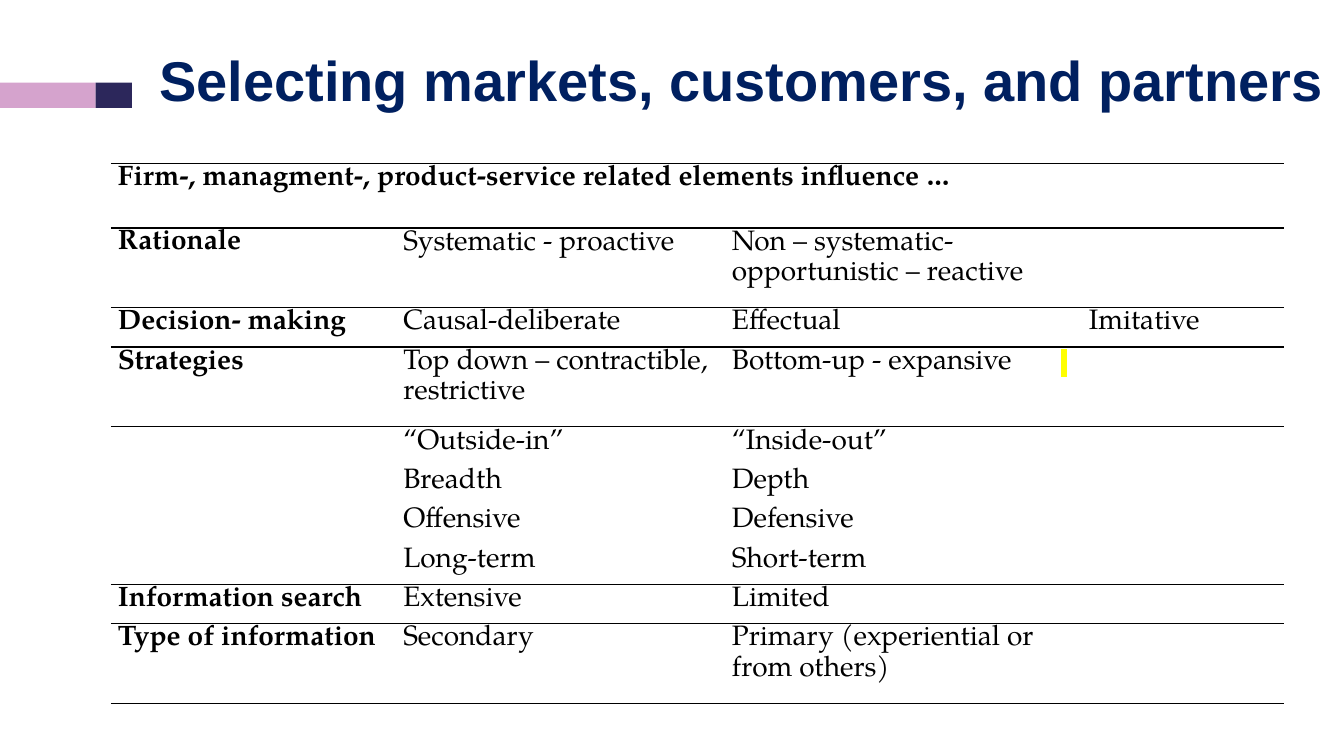
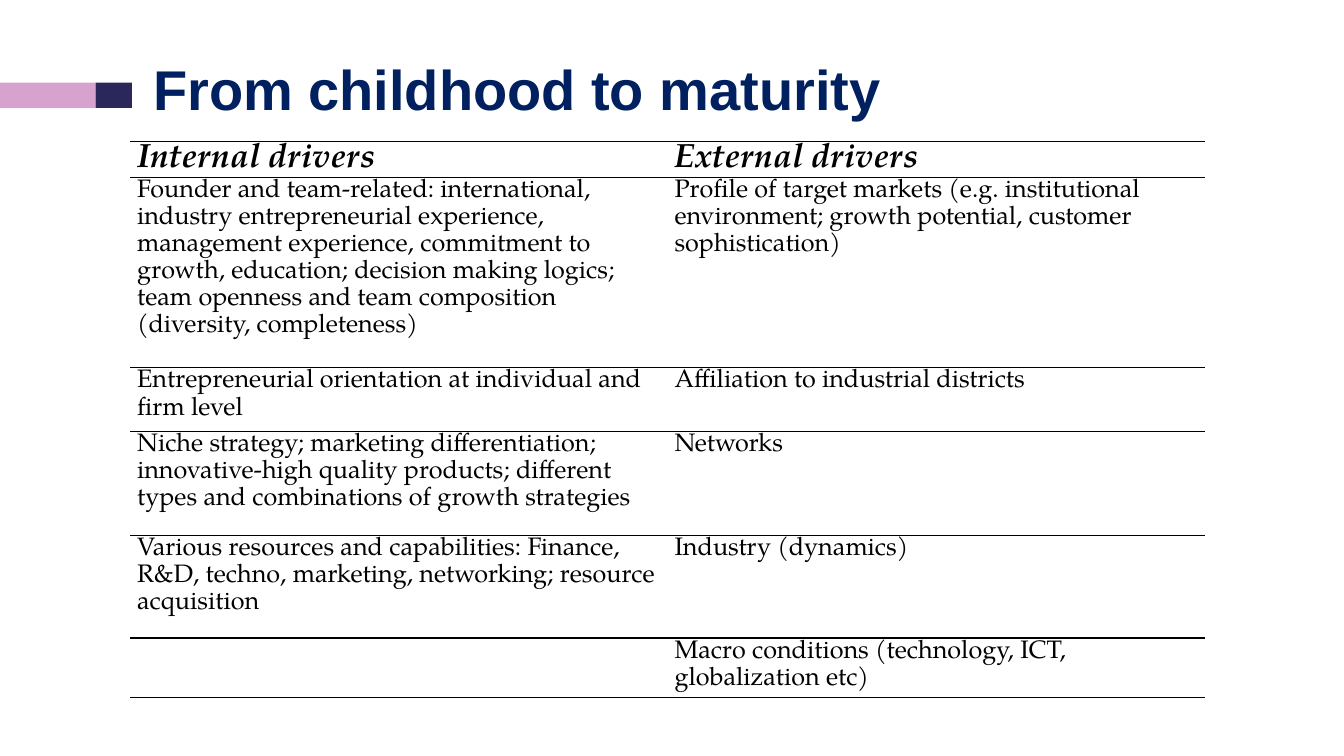
from pptx import Presentation
from pptx.dml.color import RGBColor
from pptx.enum.shapes import MSO_SHAPE
from pptx.enum.text import MSO_ANCHOR, MSO_AUTO_SIZE, PP_ALIGN
from pptx.oxml import parse_xml
from pptx.oxml.ns import nsdecls, qn
from pptx.util import Inches, Pt

COLORS = {"pink": "D5A3CD", "indigo": "2C275B", "title": "002060",
          "text": "000000", "rule": "000000", "mark": "FFFF00"}
SERIF = "TeX Gyre Pagella"
PLAIN_GRID = "{2D5ABB26-0587-4C30-8999-92F81FD0307C}"
INSETS = {"margin_left": 0.07, "margin_right": 0.07,
          "margin_top": 0, "margin_bottom": 0}
TITLE = {"name": "Arial", "size": Pt(40), "bold": True}
BODY_20 = {"name": SERIF, "size": Pt(20), "bold": False}
LABEL_20 = {**BODY_20, "bold": True}
BODY_18 = {"name": SERIF, "size": Pt(18), "bold": False}
HEAD_24 = {"name": SERIF, "size": Pt(24), "bold": True, "italic": True}

MARKETS = [
    ["Firm-, managment-, product-service related elements influence …", "", "", ""],
    ["Rationale", "Systematic - proactive",
     "Non – systematic- opportunistic – reactive", ""],
    ["Decision- making", "Causal-deliberate", "Effectual", "Imitative"],
    ["Strategies", "Top down – contractible, restrictive",
     "Bottom-up - expansive", " "],
    ["", "“Outside-in”", "“Inside-out”", ""],
    ["", "Breadth", "Depth", ""],
    ["", "Offensive", "Defensive", ""],
    ["", "Long-term", "Short-term", ""],
    ["Information search", "Extensive", "Limited", ""],
    ["Type of information", "Secondary",
     "Primary (experiential or from others)", ""],
]
DRIVERS = [
    ["Internal drivers", "External drivers"],
    ["Founder and team-related: international, industry entrepreneurial "
     "experience, management experience, commitment to growth, education; "
     "decision making logics; team openness and team composition "
     "(diversity, completeness)",
     "Profile of target markets (e.g. institutional environment; growth "
     "potential, customer sophistication)"],
    ["Entrepreneurial orientation at individual and firm level",
     "Affiliation to industrial districts"],
    ["Niche strategy; marketing differentiation; innovative-high quality "
     "products; different types and combinations of growth strategies",
     "Networks"],
    ["Various resources and capabilities: Finance, R&D, techno, marketing, "
     "networking; resource acquisition", "Industry (dynamics)"],
    ["", "Macro conditions (technology, ICT, globalization etc)"],
]


def rgb(name):
    """Look up a palette colour."""
    return RGBColor.from_string(COLORS[name])


def format_font(font, style, color):
    """Apply a dict of font values and a palette colour."""
    for key, value in style.items():
        setattr(font, key, value)
    font.color.rgb = rgb(color)


def add_bands(s, layout, box):
    """Draw the two title bands in a box and hand them to the layout."""
    x, y, w, h = box
    split = 0.95 / 1.31
    for color, start, share in (("pink", 0, split), ("indigo", split, 1 - split)):
        band = s.shapes.add_shape(MSO_SHAPE.RECTANGLE, Inches(x + start * w),
                                  Inches(y), Inches(share * w), Inches(h))
        band.shadow.inherit = False
        band.fill.solid()
        band.fill.fore_color.rgb = rgb(color)
        band.line.fill.background()
        layout.shapes.element.append(band.element)


def set_title(s, text, box):
    """Place and format the title placeholder."""
    sp = s.shapes.title
    sp.left, sp.top, sp.width, sp.height = map(Inches, box)
    tf = sp.text_frame
    tf.auto_size = MSO_AUTO_SIZE.NONE
    tf.word_wrap = True
    tf.vertical_anchor = MSO_ANCHOR.MIDDLE
    p = tf.paragraphs[0]
    p.alignment = PP_ALIGN.LEFT
    p.line_spacing = 0.9
    r = p.add_run()
    r.text = text
    format_font(r.font, TITLE, "title")


def add_rule(cell, side):
    """Rule the top (T) or bottom (B) edge of a cell."""
    cell._tc.get_or_add_tcPr().insert(0, parse_xml(
        f'<a:ln{side} {nsdecls("a")} w="12700"><a:solidFill>'
        f'<a:srgbClr val="{COLORS["rule"]}"/></a:solidFill></a:ln{side}>'))


def highlight(r):
    """Mark a run with the highlighter colour."""
    r.font._element.find(qn("a:latin")).addprevious(parse_xml(
        f'<a:highlight {nsdecls("a")}><a:srgbClr val="{COLORS["mark"]}"/>'
        '</a:highlight>'))


def fill_cell(cell, text, style):
    """Set the insets and text of a cell."""
    for key, value in INSETS.items():
        setattr(cell, key, Inches(value))
    cell.fill.background()
    p = cell.text_frame.paragraphs[0]
    p.line_spacing = 1.07
    if text:
        r = p.add_run()
        r.text = text
        format_font(r.font, style, "text")
        if text.isspace():
            highlight(r)
    else:
        format_font(p.font, style, "text")


def add_ruled_table(s, box, rows, widths, heights, style_at, unruled=()):
    """Build a table in a box, with rules below all but the unruled rows."""
    x, y, w, h = box
    table = s.shapes.add_table(len(rows), len(widths), *map(Inches, box)).table
    table._tbl.tblPr.find(qn("a:tableStyleId")).text = PLAIN_GRID
    table.first_row = table.horz_banding = False
    for column, share in zip(table.columns, widths):
        column.width = Inches(w * share / sum(widths))
    for row, share in zip(table.rows, heights):
        row.height = Inches(h * share / sum(heights))
    for i, texts in enumerate(rows):
        for j, text in enumerate(texts):
            cell = table.cell(i, j)
            fill_cell(cell, text, style_at(i, j))
            if i not in unruled:
                add_rule(cell, "B")
            if i - 1 not in unruled:
                add_rule(cell, "T")
    return table


def markets_slide(s):
    """Compare the ways of selecting markets."""
    set_title(s, "Selecting markets, customers, and partners",
              (1.48, 0.36, 11.85, 0.93))
    table = add_ruled_table(
        s, (1.1, 1.62, 11.64, 5.36), MARKETS, (2.83, 3.26, 3.26, 2.29),
        (0.64, 0.79, 0.39, 0.79, 0.39, 0.39, 0.39, 0.39, 0.39, 0.79),
        lambda i, j: BODY_20 if j else LABEL_20, unruled=range(3, 7))
    table.cell(0, 0).merge(table.cell(0, 3))
    table.cell(2, 3).margin_left = Inches(0.35)


def drivers_slide(s):
    """List the internal and external drivers."""
    set_title(s, "From childhood to maturity", (1.42, 0.43, 11.5, 0.98))
    add_ruled_table(
        s, (1.29, 1.4, 10.66, 5.52), DRIVERS, (1, 1),
        (0.36, 1.89, 0.63, 1.03, 1.02, 0.59),
        lambda i, j: BODY_18 if i else HEAD_24)


def main():
    """Build and save the presentation."""
    prs = Presentation()
    prs.slide_width, prs.slide_height = Inches(13.33), Inches(7.5)
    layout = prs.slide_layouts.get_by_name("Title Only")
    slides = [prs.slides.add_slide(layout) for _ in range(2)]
    add_bands(slides[0], layout, (0, 0.82, 1.31, 0.25))
    for build, s in zip((markets_slide, drivers_slide), slides):
        build(s)
    prs.save("out.pptx")


if __name__ == "__main__":
    main()
